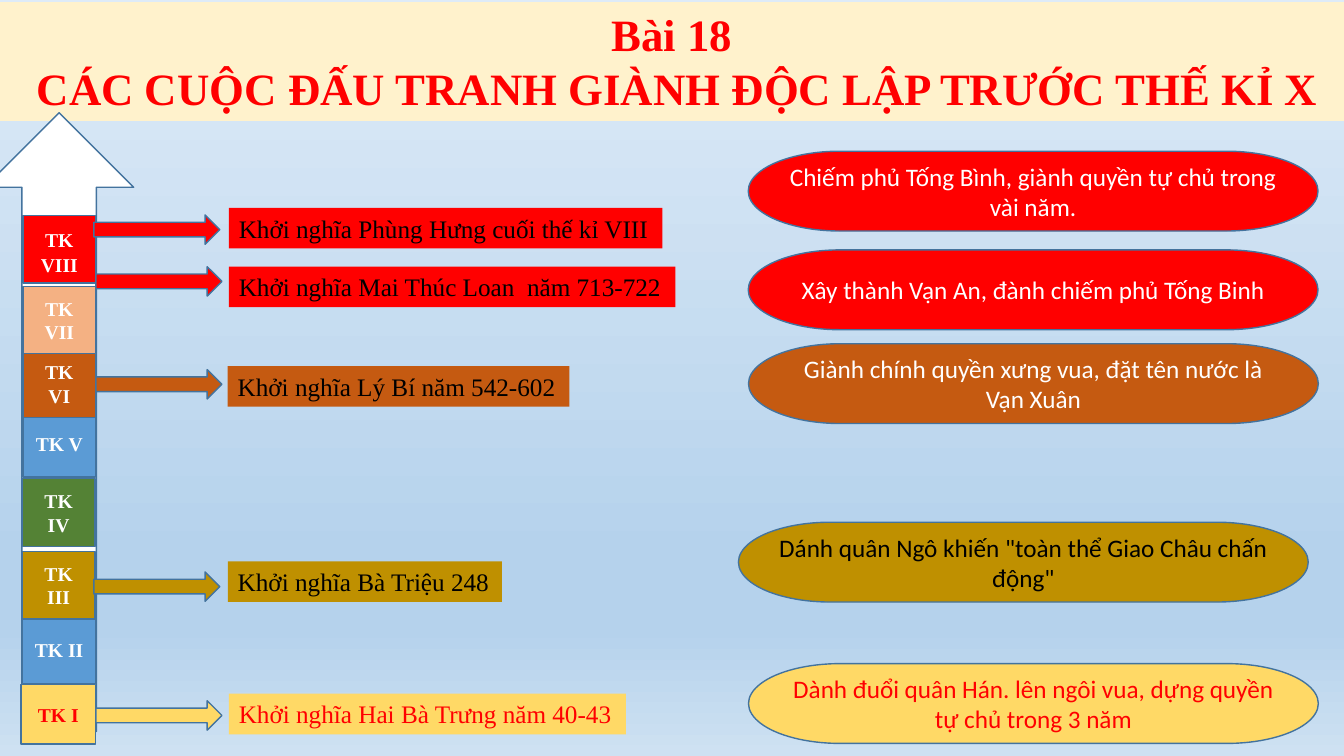
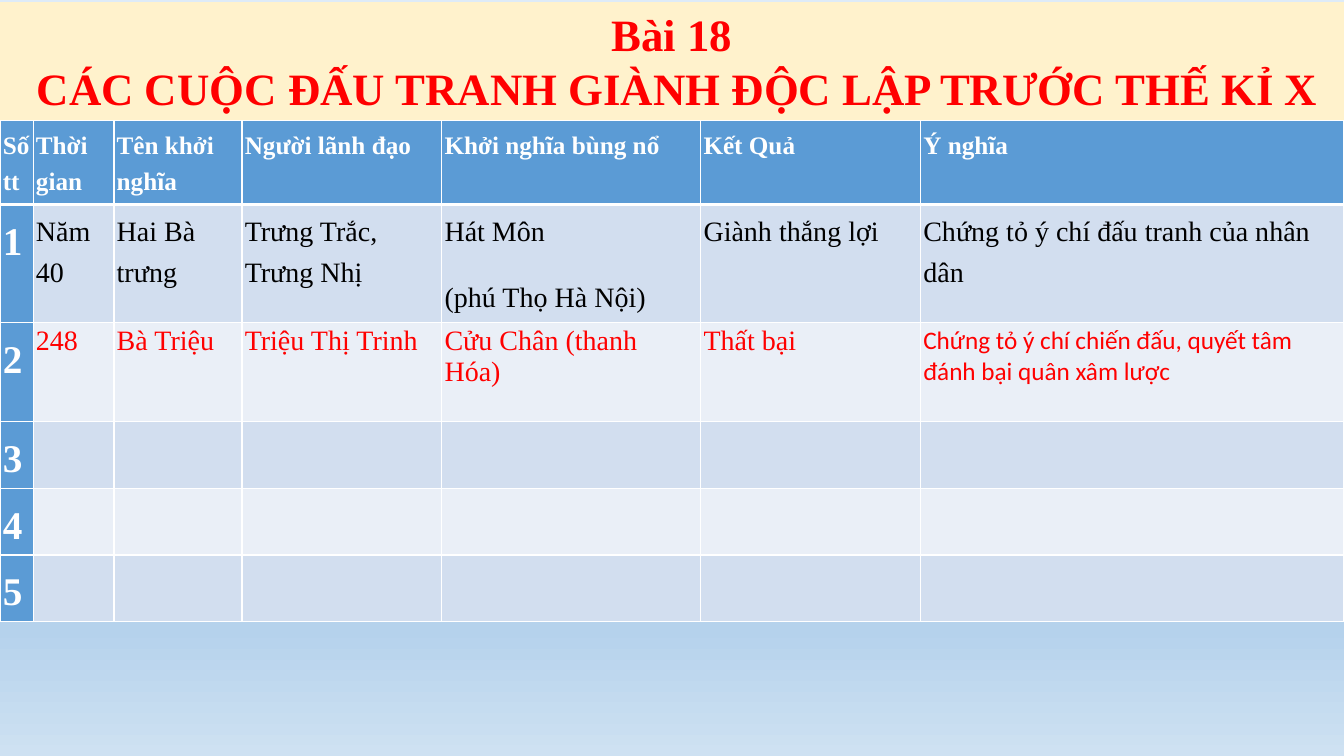
import lxml.etree
import pptx
import pptx.dml.color
import pptx.enum.shapes
import pptx.enum.text
import pptx.oxml.ns
import pptx.util

Pt = pptx.util.Pt
SHAPE = pptx.enum.shapes.MSO_SHAPE
ALIGN = pptx.enum.text.PP_ALIGN
ANCHOR = pptx.enum.text.MSO_ANCHOR
AUTO_SIZE = pptx.enum.text.MSO_AUTO_SIZE
qn = pptx.oxml.ns.qn

COLORS = {
    "red": "FF0000", "white": "FFFFFF", "black": "000000", "cream": "FFF2CC",
    "yellow": "FFD966", "gold": "BF9000", "green": "548235", "blue": "5B9BD5",
    "rust": "C55A11", "peach": "F4B183", "outline": "43739E",
    "band_dark": "D2DEEF", "band_light": "EAEFF7",
    "sky_pale": "DEEBF7", "sky": "B5D2EC", "sky_light": "CEE1F2",
}
BACKGROUND = [(0, "sky_pale"), (74, "sky"), (83, "sky"), (100, "sky_light")]
SERIF, SANS = "Times New Roman", "Calibri"
WIDTH, HEIGHT = 960, 540
TITLE = ["Bài 18", " CÁC CUỘC ĐẤU TRANH GIÀNH ĐỘC LẬP TRƯỚC THẾ KỈ X"]

CENTURIES = [
    ("I", 15, 489, 53.2, 42.5, "yellow", "red"),
    ("II", 16, 440, 52.5, 48.2, "blue", "white"),
    ("III", 16, 394, 51.8, 48.2, "gold", "white"),
    ("IV", 16, 342, 51.8, 48.2, "green", "white"),
    ("V", 16.5, 292.5, 51.8, 48.2, "blue", "white"),
    ("VI", 16.5, 250, 51.8, 48.2, "rust", "white"),
    ("VII", 16.5, 204.5, 51.8, 48.2, "peach", "white"),
    ("VIII", 16.5, 154, 51.8, 48.2, "red", "white"),
]
UPRISINGS = [
    ("yellow", "red", "Khởi nghĩa Hai Bà Trưng năm 40-43", (163.5, 495.5, 283.7), (68.5, 500.5)),
    ("gold", "black", "Khởi nghĩa Bà Triệu 248", (162.7, 401, 195.8), (67, 408.5)),
    ("rust", "black", "Khởi nghĩa Lý Bí năm 542-602", (162.7, 261.5, 244), (68.5, 264)),
    ("red", "black", "Khởi nghĩa Mai Thúc Loan  năm 713-722", (163.5, 190.5, 319), (68.5, 190.5)),
    ("red", "black", "Khởi nghĩa Phùng Hưng cuối thế kỉ VIII", (163.5, 148.5, 309.6), (67, 153.5)),
]
RESULTS = [
    ("yellow", "red", 534.7, 474, "Dành đuổi quân Hán. lên ngôi vua, dựng quyền tự chủ trong 3 năm"),
    ("gold", "black", 527.5, 373, "Dánh quân Ngô khiến \"toàn thể Giao Châu chấn động\""),
    ("rust", "white", 534.7, 245.5, "Giành chính quyền xưng vua, đặt tên nước là Vạn Xuân"),
    ("red", "white", 534.5, 178.5, "Xây thành Vạn An, đành chiếm phủ Tống Binh"),
    ("red", "white", 534.5, 108, "Chiếm phủ Tống Bình, giành quyền tự chủ trong vài năm."),
]

COLUMNS = [23.7, 57.7, 91.5, 142.7, 185, 157, 302.4]
ROWS = [60, 84.3, 70.6, 47.6, 47.6, 47.6]
CELLS = [
    ["Số tt", "Thời gian", "Tên khởi nghĩa", "Người lãnh đạo", "Khởi nghĩa bùng nổ", "Kết Quả", "Ý nghĩa"],
    ["1", "Năm 40", "Hai Bà trưng", "Trưng Trắc, Trưng Nhị", "Hát Môn\n(phú Thọ Hà Nội)",
     "Giành thắng lợi", "Chứng tỏ ý chí đấu tranh của nhân dân"],
    ["2", "248", "Bà Triệu", "Triệu Thị Trinh", "Cửu Chân (thanh Hóa)", "Thất bại",
     "Chứng tỏ ý chí chiến đấu, quyết tâm đánh bại quân xâm lược"],
    ["3"], ["4"], ["5"],
]


class Deck:
    """Holds the shared style and the current slide, and draws each kind of element."""

    def __init__(self):
        self.prs = pptx.Presentation()
        self.prs.slide_width, self.prs.slide_height = Pt(WIDTH), Pt(HEIGHT)
        self.slide = None

    def rgb(self, color):
        return pptx.dml.color.RGBColor.from_string(COLORS[color])

    def paint(self, fill, color):
        fill.solid()
        fill.fore_color.rgb = self.rgb(color)

    def new_slide(self):
        self.slide = self.prs.slides.add_slide(self.prs.slide_layouts[6])
        fill = self.slide.background.fill
        fill.gradient()
        fill.gradient_angle = 270
        stops = next(self.slide.element.iter(qn("a:gsLst")))
        for stop in list(stops):
            stops.remove(stop)
        for percent, color in BACKGROUND:
            gs = lxml.etree.SubElement(stops, qn("a:gs"), pos=str(percent * 1000))
            lxml.etree.SubElement(gs, qn("a:srgbClr"), val=COLORS[color])
        self.title()

    def set_text(self, tf, lines, size, color, font=SERIF, bold=False, align=ALIGN.CENTER):
        tf.text = "\n".join(lines)
        for p in tf.paragraphs:
            p.alignment = align
            p.font.name, p.font.size, p.font.bold = font, Pt(size), bold
            p.font.color.rgb = self.rgb(color)

    def shape(self, kind, left, top, width, height, fill, line="outline"):
        sp = self.slide.shapes.add_shape(kind, Pt(left), Pt(top), Pt(width), Pt(height))
        sp.shadow.inherit = False
        self.paint(sp.fill, fill)
        if line:
            sp.line.color.rgb = self.rgb(line)
            sp.line.width = Pt(1)
        else:
            sp.line.fill.background()
        sp.text_frame.vertical_anchor = ANCHOR.MIDDLE
        return sp

    def title(self):
        sp = self.shape(SHAPE.RECTANGLE, 0, 1.5, WIDTH, 84.8, "cream", None)
        sp.text_frame.vertical_anchor = ANCHOR.TOP
        sp.text_frame.auto_size = AUTO_SIZE.SHAPE_TO_FIT_TEXT
        self.set_text(sp.text_frame, TITLE, 32, "red", bold=True)

    def century(self, numeral, left, top, width, height, fill, color):
        sp = self.shape(SHAPE.FLOWCHART_PROCESS, left, top, width, height, fill)
        self.set_text(sp.text_frame, ["TK"], 14, color, bold=True)
        p = sp.text_frame.paragraphs[0]
        space = p.add_run()
        space.text = " "
        if numeral == "VIII":
            space.font.size = Pt(18)
        p.add_run().text = numeral

    def label(self, text, left, top, width, fill, color):
        sp = self.slide.shapes.add_textbox(Pt(left), Pt(top), Pt(width), Pt(29))
        self.paint(sp.fill, fill)
        tf = sp.text_frame
        tf.word_wrap = False
        tf.auto_size = AUTO_SIZE.SHAPE_TO_FIT_TEXT
        self.set_text(tf, [text], 18, color, align=ALIGN.LEFT)

    def arrow(self, left, top, fill):
        self.shape(SHAPE.RIGHT_ARROW, left, top, 90, 21, fill)

    def result(self, fill, color, left, top, text):
        sp = self.shape(SHAPE.FLOWCHART_TERMINATOR, left, top, 407, 57, fill)
        self.set_text(sp.text_frame, [text], 18, color, SANS)

    def borders(self, cell, row):
        tc_pr = cell._tc.get_or_add_tcPr()
        for side in "LRTB":
            heavy = (row, side) in [(0, "B"), (1, "T")]
            ln = lxml.etree.SubElement(tc_pr, qn("a:ln" + side), w=str(Pt(3 if heavy else 1)))
            fill = lxml.etree.SubElement(ln, qn("a:solidFill"))
            lxml.etree.SubElement(fill, qn("a:srgbClr"), val=COLORS["white"])

    def cell(self, cell, row, col, text):
        self.borders(cell, row)
        heading = row == 0 or col == 0
        self.paint(cell.fill, "blue" if heading else "band_dark" if row % 2 else "band_light")
        cell.margin_left = cell.margin_right = cell.margin_top = cell.margin_bottom = Pt(2)
        if not text:
            return
        size, font = 18 if row == 0 else 28 if col == 0 else 20, SERIF
        if (row, col) == (2, 6):
            size, font = 18, SANS
        color = "white" if heading else "black" if row == 1 else "red"
        self.set_text(cell.text_frame, text.split("\n"), size, color, font, heading, ALIGN.LEFT)
        if heading or row == 1:
            for p in cell.text_frame.paragraphs:
                p.line_spacing, p.space_before, p.space_after = 1.3, Pt(3), Pt(15)

    def table(self, top, columns, rows, cells):
        frame = self.slide.shapes.add_table(
            len(rows), len(columns), 0, Pt(top), Pt(sum(columns)), Pt(sum(rows)))
        table = frame.table
        table.first_row = table.horz_banding = False
        for col, width in enumerate(columns):
            table.columns[col].width = Pt(width)
        for row, height in enumerate(rows):
            table.rows[row].height = Pt(height)
            for col in range(len(columns)):
                text = cells[row][col] if col < len(cells[row]) else ""
                self.cell(table.cell(row, col), row, col, text)


def main():
    deck = Deck()

    deck.new_slide()
    deck.shape(SHAPE.UP_ARROW, -11, 80.5, 106.5, 442, "white")
    for century in CENTURIES:
        deck.century(*century)
    for fill, color, text, place, _ in UPRISINGS:
        deck.label(text, *place, fill, color)
    for fill, _, _, _, tail in UPRISINGS:
        deck.arrow(*tail, fill)
    for result in RESULTS:
        deck.result(*result)

    deck.new_slide()
    deck.table(86, COLUMNS, ROWS, CELLS)

    deck.prs.save("out.pptx")


if __name__ == "__main__":
    main()
